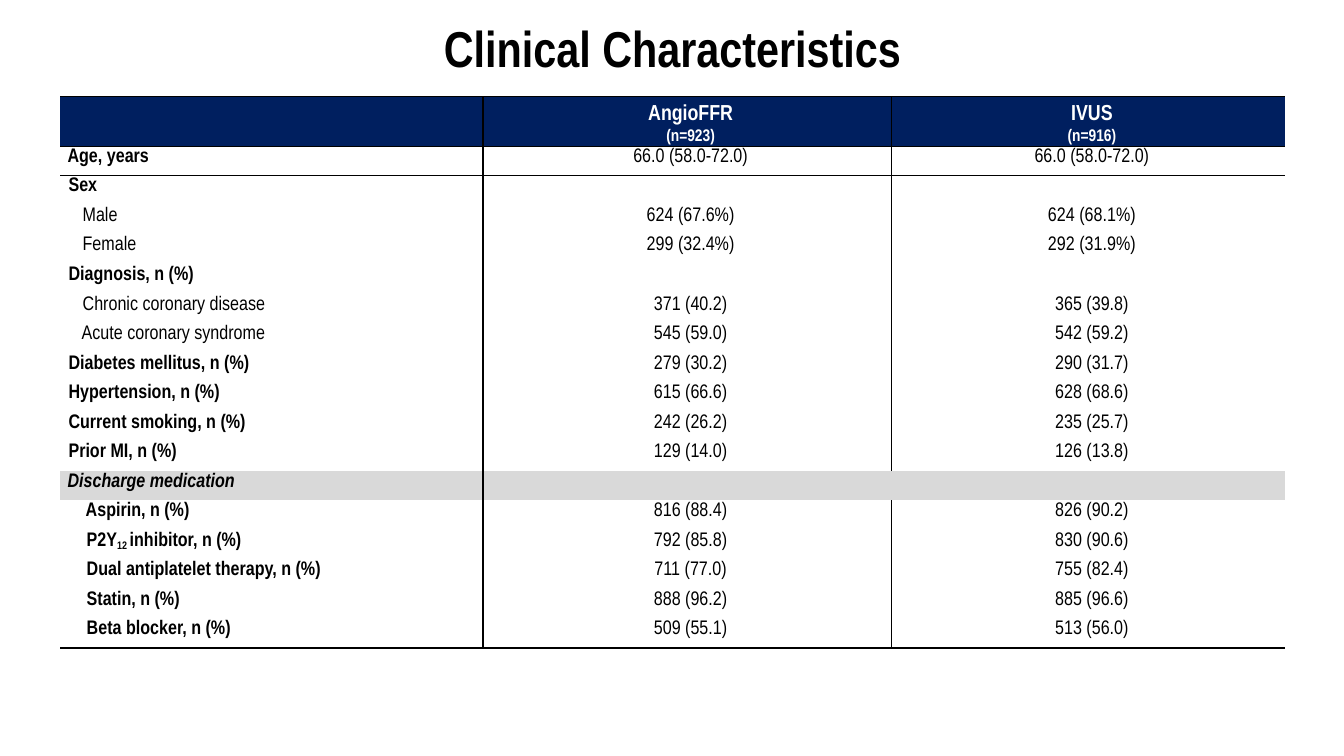
from lxml import etree
from pptx import Presentation
from pptx.dml.color import RGBColor
from pptx.enum import text
from pptx.oxml.ns import qn
from pptx.util import Inches, Pt

FONT = "Arial Narrow"
BLACK, WHITE, NAVY, GREY = "000000", "FFFFFF", "001F5F", "D9D9D9"
NO_GRID_STYLE = "{2D5ABB26-0587-4C30-8999-92F81FD0307C}"
COLUMN_WIDTHS = (4.19, 4.05, 3.91)
HEADER_HEIGHT = 0.49
ARMS = (("AngioFFR", "(n=923)"), ("IVUS", "(n=916)"))

# Label, AngioFFR value, IVUS value, label indent, label style
ROWS = (
    ("Age, years", "66.0 (58.0-72.0)", "66.0 (58.0-72.0)", 0.07, "bold"),
    ("Sex", "", "", 0.08, "bold"),
    ("Male", "624 (67.6%)", "624 (68.1%)", 0.22, "plain"),
    ("Female", "299 (32.4%)", "292 (31.9%)", 0.22, "plain"),
    ("Diagnosis, n (%)", "", "", 0.08, "bold"),
    ("Chronic coronary disease", "371 (40.2)", "365 (39.8)", 0.22, "plain"),
    ("Acute coronary syndrome", "545 (59.0)", "542 (59.2)", 0.21, "plain"),
    ("Diabetes mellitus, n (%)", "279 (30.2)", "290 (31.7)", 0.08, "bold"),
    ("Hypertension, n (%)", "615 (66.6)", "628 (68.6)", 0.08, "bold"),
    ("Current smoking, n (%)", "242 (26.2)", "235 (25.7)", 0.08, "bold"),
    ("Prior MI, n (%)", "129 (14.0)", "126 (13.8)", 0.08, "bold"),
    ("Discharge medication", "", "", 0.07, "section"),
    ("Aspirin, n (%)", "816 (88.4)", "826 (90.2)", 0.25, "bold"),
    (("P2Y", "12 ", "inhibitor, n (%)"), "792 (85.8)", "830 (90.6)", 0.26, "bold"),
    ("Dual antiplatelet therapy, n (%)", "711 (77.0)", "755 (82.4)", 0.26, "bold"),
    ("Statin, n (%)", "888 (96.2)", "885 (96.6)", 0.26, "bold"),
    ("Beta blocker, n (%)", "509 (55.1)", "513 (56.0)", 0.26, "bold"),
)


def color(value):
    return RGBColor.from_string(value)


def style_font(para, size, hex_color, bold=False, italic=False):
    font = para.font
    font.name, font.size, font.bold, font.italic = FONT, Pt(size), bold, italic
    font.color.rgb = color(hex_color)


def write_label(para, label):
    """Write a plain label, or a (base, subscript, rest) triple."""
    if isinstance(label, str):
        para.text = label
        return
    for index, part in enumerate(label):
        span = para.add_run()
        span.text = part
        if index == 1:
            span.font.size = Pt(13.5)
            span.font._element.set("baseline", "-19000")


def finish_cell(cell, sides, fill=None, indent=0.07):
    """Set margins, black borders on the given sides (in L, R, T, B order) and fill."""
    cell.margin_left, cell.margin_top = Inches(indent), Inches(0.02)
    cell.margin_right = cell.margin_bottom = 0
    properties = cell._tc.get_or_add_tcPr()
    for side in sides:
        line = etree.SubElement(properties, qn("a:ln" + side), w=str(Pt(1)))
        paint = etree.SubElement(line, qn("a:solidFill"))
        etree.SubElement(paint, qn("a:srgbClr"), val=BLACK)
    if fill:
        cell.fill.solid()
        cell.fill.fore_color.rgb = color(fill)
    else:
        cell.fill.background()


def add_title(page, left, top, width, height):
    box = page.shapes.add_textbox(*map(Inches, (left, top, width, height)))
    frame = box.text_frame
    frame.word_wrap = True
    frame.margin_left = frame.margin_right = frame.margin_bottom = 0
    frame.margin_top = Inches(0.02)
    para = frame.paragraphs[0]
    para.text = "Clinical Characteristics"
    para.alignment = text.PP_ALIGN.CENTER
    style_font(para, 36, BLACK, bold=True)


def fill_header(table):
    finish_cell(table.cell(0, 0), "RTB", NAVY)
    style_font(table.cell(0, 0).text_frame.paragraphs[0], 14, WHITE)
    for column, arm in enumerate(ARMS, 1):
        cell = table.cell(0, column)
        cell.text = "\n".join(arm)
        for para, size, spacing in zip(cell.text_frame.paragraphs, (15.5, 12), (18.6, 14.3)):
            para.alignment = text.PP_ALIGN.CENTER
            para.line_spacing = Pt(spacing)
            style_font(para, size, WHITE, bold=True)
        finish_cell(cell, "RTB" if column == 1 else "TB", NAVY)


def fill_row(table, index, label, values, indent, style):
    section = style == "section"
    fill = GREY if section else None
    bottom = "B" if index in (1, len(ROWS)) else ""
    cell = table.cell(index, 0)
    para = cell.text_frame.paragraphs[0]
    write_label(para, label)
    style_font(para, 14, BLACK, bold=style != "plain", italic=section)
    finish_cell(cell, "R" + bottom, fill, indent)
    if section:
        table.cell(index, 1).merge(table.cell(index, 2))
    for column, value in enumerate(values, 1):
        cell = table.cell(index, column)
        para = cell.text_frame.paragraphs[0]
        para.text = value
        para.alignment = text.PP_ALIGN.CENTER
        style_font(para, 14, BLACK)
        right = "R" if column == 1 and not section else ""
        finish_cell(cell, right + bottom, fill)


def add_characteristics(page, left, top, width, height):
    frame = page.shapes.add_table(
        len(ROWS) + 1, len(COLUMN_WIDTHS), *map(Inches, (left, top, width, height)))
    table = frame.table
    table.horz_banding = False
    table._tbl.tblPr.find(qn("a:tableStyleId")).text = NO_GRID_STYLE
    for column, share in zip(table.columns, COLUMN_WIDTHS):
        column.width = Inches(width * share / sum(COLUMN_WIDTHS))
    for index, row in enumerate(table.rows):
        row.height = Inches((height - HEADER_HEIGHT) / len(ROWS) if index else HEADER_HEIGHT)
    fill_header(table)
    for index, (label, angio, ivus, indent, style) in enumerate(ROWS, 1):
        fill_row(table, index, label, (angio, ivus), indent, style)


def main():
    deck = Presentation()
    deck.slide_width, deck.slide_height = Inches(13.33), Inches(7.5)
    page = deck.slides.add_slide(deck.slide_layouts[6])
    add_title(page, 4.39, 0.15, 4.56, 0.63)
    add_characteristics(page, 0.6, 0.96, 12.15, 5.47)
    deck.save("out.pptx")


if __name__ == "__main__":
    main()
